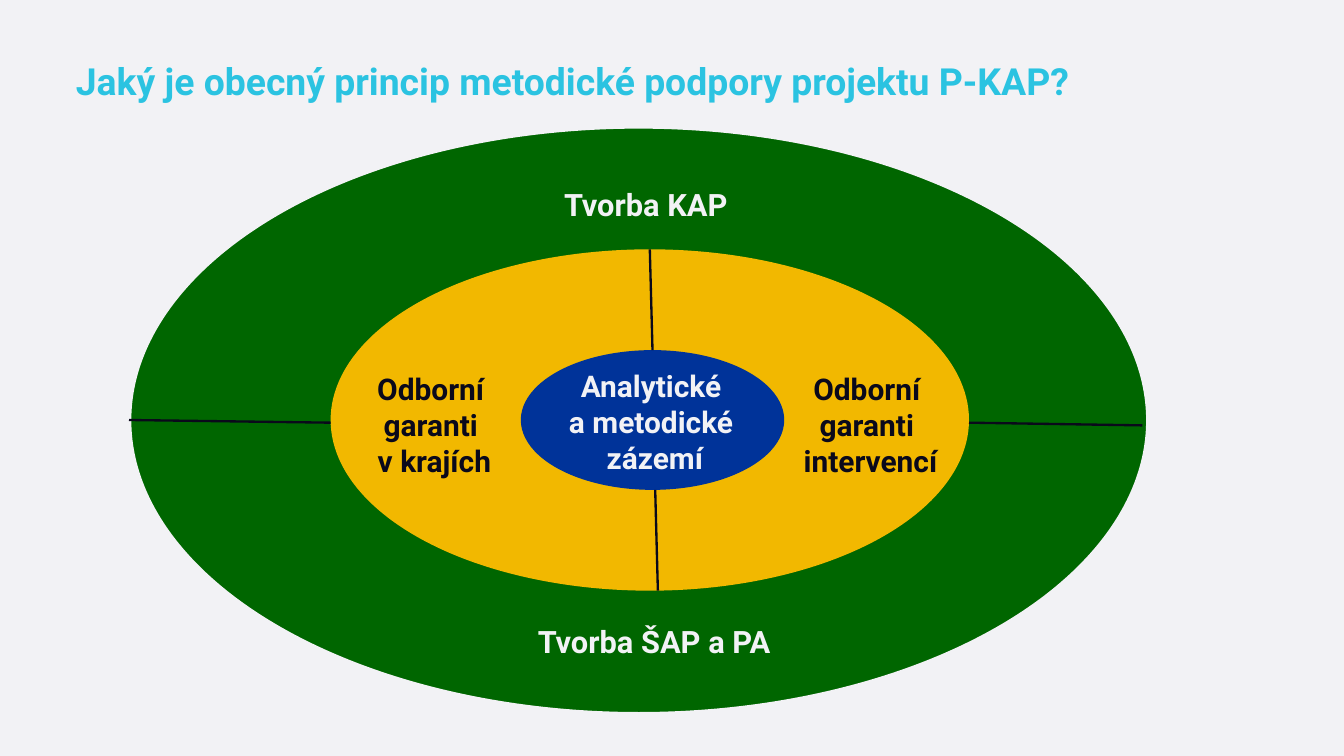
"""Builds the slide on the principle of methodical support in the P-KAP project."""
import pptx
import pptx.dml.color
import pptx.enum.shapes
import pptx.enum.text
import pptx.oxml.ns
import pptx.util
from lxml import etree

Inches = pptx.util.Inches
Pt = pptx.util.Pt
RGBColor = pptx.dml.color.RGBColor
Align = pptx.enum.text.PP_ALIGN

PALE = RGBColor(0xF2, 0xF2, 0xF5)
INK = RGBColor(0x0A, 0x09, 0x1B)
CYAN = RGBColor(0x2B, 0xC3, 0xE1)
GREEN = RGBColor(0x00, 0x66, 0x00)
AMBER = RGBColor(0xF2, 0xB8, 0x00)
BLUE = RGBColor(0x00, 0x33, 0x99)


class SupportSlide:
    """Holds the text style and the slide, and draws each kind of element."""

    text_style = {"name": "Roboto", "bold": True}

    def __init__(self, slide):
        self.slide = slide
        slide.background.fill.solid()
        slide.background.fill.fore_color.rgb = PALE

    def ring(self, box, color, outline=None):
        ellipse = self.slide.shapes.add_shape(
            pptx.enum.shapes.MSO_SHAPE.OVAL, *map(Inches, box))
        ellipse.shadow.inherit = False
        ellipse.fill.solid()
        ellipse.fill.fore_color.rgb = color
        if outline:
            ellipse.line.color.rgb = PALE
            ellipse.line.width = Pt(outline)
        else:
            ellipse.line.fill.background()

    def label(self, box, lines, size, color, align=Align.CENTER, wrap=True, spacing=None):
        frame = self.slide.shapes.add_textbox(*map(Inches, box)).text_frame
        frame.word_wrap = wrap
        frame.vertical_anchor = pptx.enum.text.MSO_ANCHOR.MIDDLE
        frame.text = "\n".join(lines)
        for paragraph in frame.paragraphs:
            paragraph.alignment = align
            paragraph.line_spacing = spacing
            font = paragraph.runs[0].font
            for attribute, value in {**self.text_style, "size": Pt(size)}.items():
                setattr(font, attribute, value)
            font.color.rgb = color

    def divider(self, start, end):
        line = self.slide.shapes.add_connector(
            pptx.enum.shapes.MSO_CONNECTOR.STRAIGHT, *map(Inches, start + end))
        line.line.color.rgb = INK
        line.line.width = Pt(2.5)
        etree.SubElement(line._element.spPr, pptx.oxml.ns.qn("a:effectLst"))


def main():
    deck = pptx.Presentation()
    deck.slide_width, deck.slide_height = Inches(20), Inches(11.25)
    page = SupportSlide(deck.slides.add_slide(deck.slide_layouts[6]))

    page.label((1.03, 0.88, 18.05, 0.71),
               ["Jaký je obecný princip metodické podpory projektu P-KAP?"],
               40, CYAN, align=Align.LEFT, spacing=0.9)

    page.ring((1.92, 1.88, 15.17, 8.75), GREEN, outline=5)
    page.label((6.58, 9.21, 6.31, 0.66), ["Tvorba ŠAP a PA"], 33, PALE)
    page.label((7, 2.71, 5.22, 0.66), ["Tvorba KAP"], 33, PALE)

    page.ring((4.92, 3.71, 9.5, 5.08), AMBER)
    for left, width, field in ((5.51, 1.91, "v krajích"), (11.86, 2.19, "intervencí")):
        page.label((left, 5.46, width, 1.72), ["Odborní ", "garanti ", field],
                   32, INK, wrap=False)

    page.ring((7.75, 5.21, 3.92, 2.08), BLUE)
    page.label((8.35, 5.41, 2.79, 1.72), ["Analytické ", "a metodické ", "zázemí"],
               32, PALE, wrap=False)

    for start, end in (
        ((14.42, 6.29), (17, 6.33)),
        ((1.92, 6.25), (4.92, 6.29)),
        ((9.71, 5.21), (9.67, 3.71)),
        ((9.79, 8.79), (9.75, 7.29)),
    ):
        page.divider(start, end)

    deck.save("out.pptx")


if __name__ == "__main__":
    main()
